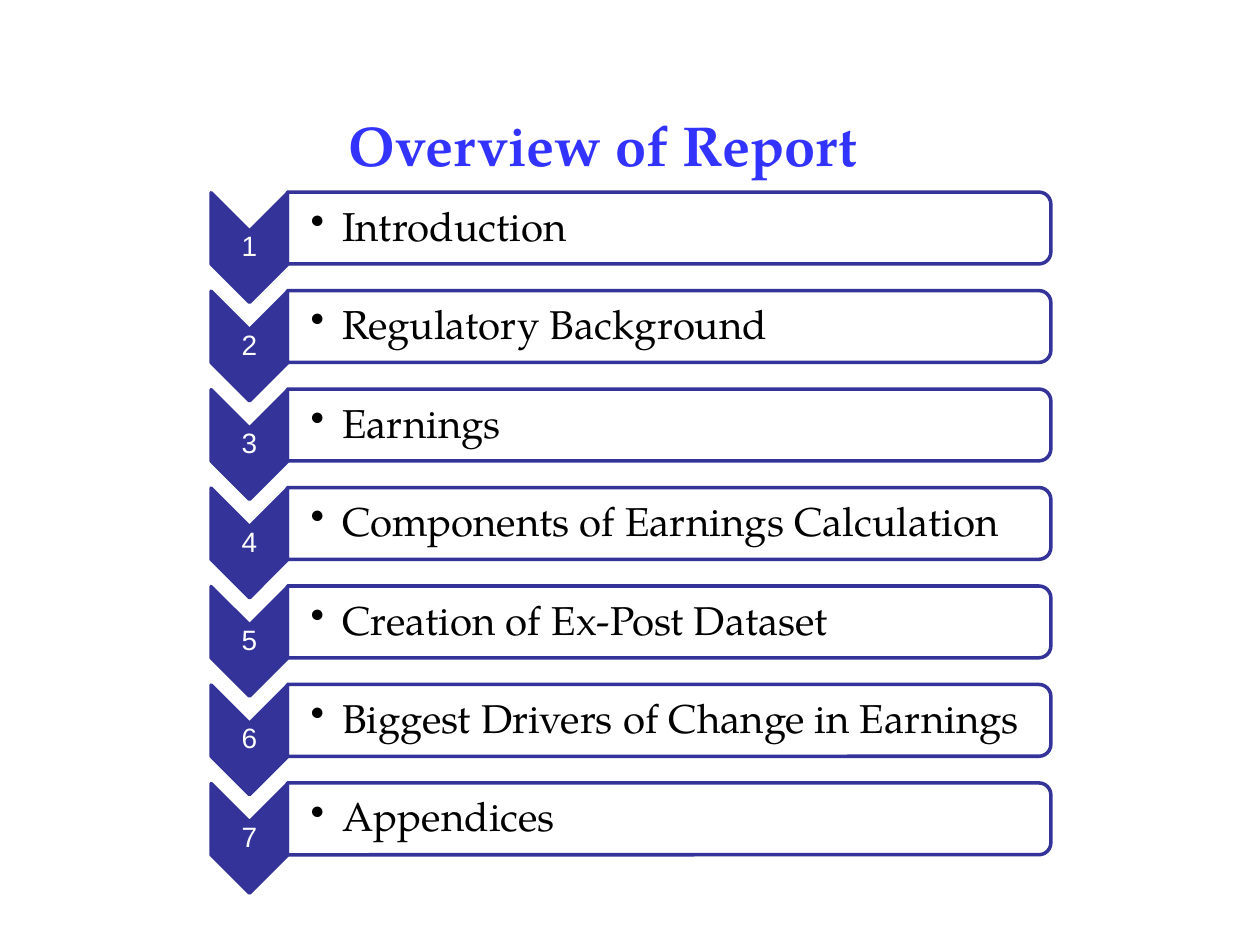
from lxml.etree import SubElement
from pptx import Presentation
from pptx.dml.color import RGBColor
from pptx.enum.shapes import MSO_SHAPE
from pptx.enum.text import MSO_ANCHOR, MSO_AUTO_SIZE, PP_ALIGN
from pptx.oxml.ns import qn
from pptx.util import Inches, Pt

TITLE = "Overview of Report"
PARTS = [
    "Introduction",
    "Regulatory Background",
    "Earnings",
    "Components of Earnings Calculation",
    "Creation of Ex-Post Dataset",
    "Biggest Drivers of Change in Earnings",
    "Appendices",
]
HEX = {"title": "3333FF", "navy": "333399", "white": "FFFFFF", "black": "000000"}
SERIF, SANS = "TeX Gyre Pagella", "Arial"
WIDE, HIGH = 10, 7.5
TOP, STEP = 1.81, 0.7815
MARK_X, BAR_X = 1.98, 5.31
DROP = 0.155


def color(name):
    return RGBColor.from_string(HEX[name])


def place(shape, mid_x, mid_y, wide, high):
    shape.left, shape.top = Inches(mid_x - wide / 2), Inches(mid_y - high / 2)
    shape.width, shape.height = Inches(wide), Inches(high)


def write(shape, text, font=SERIF, size=23, ink="black", bold=False, align=PP_ALIGN.LEFT,
          anchor=MSO_ANCHOR.MIDDLE, inset=(0.01,) * 4, line=0.9, dot=False):
    frame = shape.text_frame
    frame.word_wrap = True
    frame.auto_size = MSO_AUTO_SIZE.NONE
    frame.vertical_anchor = anchor
    (frame.margin_left, frame.margin_top,
     frame.margin_right, frame.margin_bottom) = map(Inches, inset)
    para = frame.paragraphs[0]
    para.text = text
    para.alignment = align
    para.line_spacing = line
    if dot:
        props = para._p.get_or_add_pPr()
        props.set("marL", str(Inches(0.25)))
        props.set("indent", str(-Inches(0.25)))
        SubElement(props, qn("a:buChar"), char="•")
    face = para.runs[0].font
    face.name, face.size, face.bold = font, Pt(size), bold
    face.color.rgb = color(ink)


def turned(slide, kind, mid_x, mid_y, wide, high, fill):
    shape = slide.shapes.add_shape(kind, 0, 0, 0, 0)
    place(shape, mid_x, mid_y, wide, high)
    shape.rotation = 90
    shape.shadow.inherit = False
    shape.fill.solid()
    shape.fill.fore_color.rgb = color(fill)
    shape.line.color.rgb = color("navy")
    shape.line.width = Pt(2)
    return shape


def label(slide, mid_x, mid_y, wide, high, text, **form):
    box = slide.shapes.add_textbox(0, 0, 0, 0)
    place(box, mid_x, mid_y, wide, high)
    write(box, text, **form)


def main():
    deck = Presentation()
    deck.slide_width, deck.slide_height = Inches(WIDE), Inches(HIGH)
    slide = deck.slides.add_slide(deck.slide_layouts[5])
    head = slide.shapes.title
    place(head, 4.79, 1.15, 7.92, 0.64)
    write(head, TITLE, size=32, ink="title", bold=True, align=PP_ALIGN.CENTER,
          anchor=MSO_ANCHOR.TOP, inset=(0.1, 0.05, 0.1, 0.05), line=1)

    for row, part in enumerate(PARTS):
        mid = TOP + row * STEP
        turned(slide, MSO_SHAPE.CHEVRON, MARK_X, mid + DROP, 0.87, 0.61, "navy")
        label(slide, MARK_X, mid + DROP, 0.61, 0.26, str(row + 1),
              font=SANS, size=16, ink="white", align=PP_ALIGN.CENTER)
        bar = turned(slide, MSO_SHAPE.ROUND_2_SAME_RECTANGLE, BAR_X, mid, 0.57, 6.06, "white")
        tint = bar.fill._xPr.find(qn("a:solidFill"))[0]
        SubElement(tint, qn("a:alpha"), val="90000")
        label(slide, BAR_X - 0.01, mid, 6.03, 0.51, part,
              inset=(0.18, 0.02, 0.02, 0.02), dot=True)

    deck.save("out.pptx")


if __name__ == "__main__":
    main()
